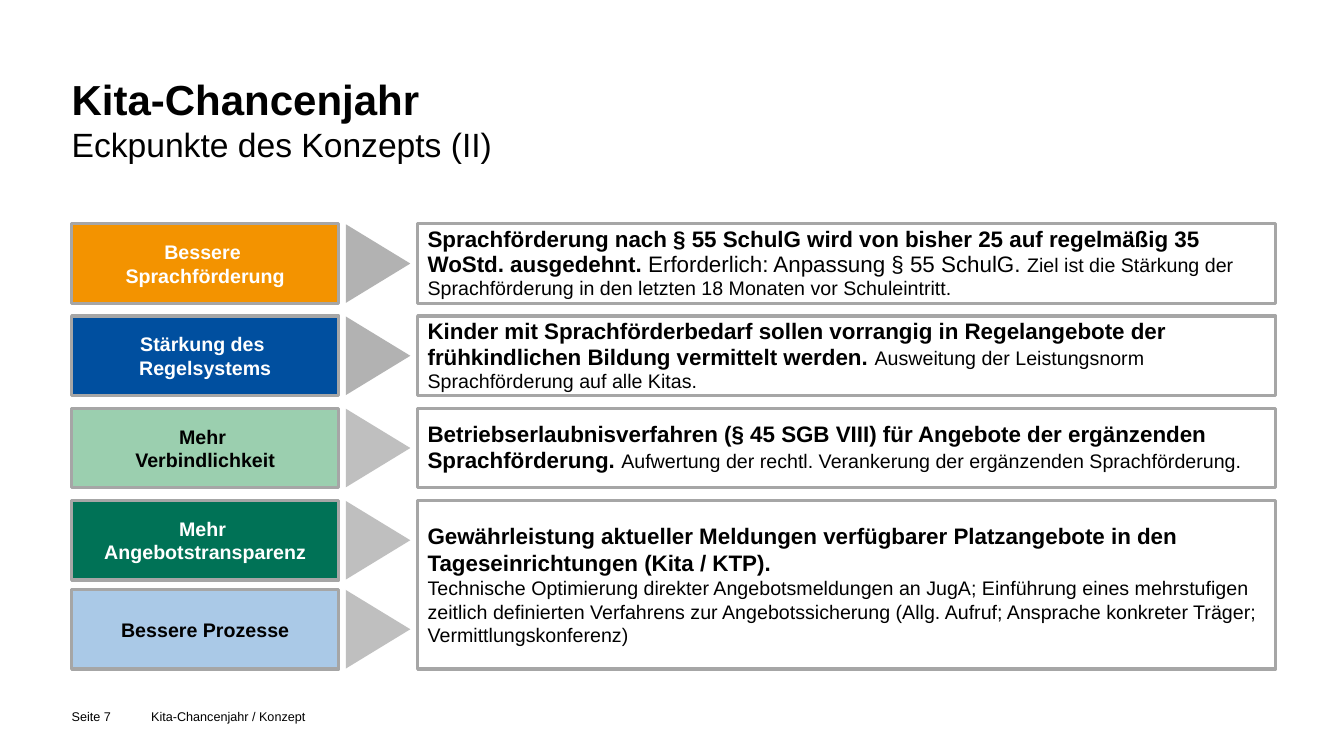
from collections import namedtuple

from pptx import Presentation
from pptx.dml.color import RGBColor
from pptx.enum.shapes import MSO_SHAPE
from pptx.enum.text import MSO_ANCHOR, MSO_AUTO_SIZE, PP_ALIGN
from pptx.util import Inches, Pt

Box = namedtuple("Box", "left top width height")

WIDTH, HEIGHT = Inches(13.33), Inches(7.5)
COLUMN, ROW = WIDTH / 100, HEIGHT / 100
FONT = "Arial"
COLORS = {
    "black": "000000", "white": "FFFFFF", "border": "A6A6A6",
    "arrow": "B2B2B2", "light arrow": "BFBFBF",
    "orange": "F39300", "blue": "004F9F", "mint": "9BCFAF",
    "green": "007256", "sky": "AAC9E7",
}
LEAD = {"size": Pt(16), "bold": True}
LABEL = {"size": Pt(14), "bold": True}
PLAIN = {"size": Pt(16), "bold": False}
DETAIL = {"size": Pt(14), "bold": False}
FOOTER = {"size": Pt(9), "bold": False}

MARGIN = 5.33
LABEL_WIDTH, LABEL_HEIGHT = 19.88, 10.53
ARROW_CENTER, ARROW_DEPTH, ARROW_SPAN = 22.8, 4.8, 10.4
TEXT_OFFSET = 25.75
BAND_TOP, BAND_PITCH = 29.6, 12.2
DOUBLE_HEIGHT = 22.3

BANDS = [
    ([("Bessere \nSprachförderung", "orange", "white")], "arrow", LABEL_HEIGHT,
     [[("Sprachförderung nach § 55 SchulG wird von bisher 25 auf regelmäßig 35 "
        "WoStd. ausgedehnt. ", LEAD),
       ("Erforderlich: Anpassung § 55 SchulG. ", PLAIN),
       ("Ziel ist die Stärkung der Sprachförderung in den letzten 18 Monaten "
        "vor Schuleintritt.", DETAIL)]]),
    ([("Stärkung des \nRegelsystems", "blue", "white")], "arrow", LABEL_HEIGHT,
     [[("Kinder mit Sprachförderbedarf sollen vorrangig in Regelangebote der "
        "frühkindlichen Bildung vermittelt werden. ", LEAD),
       ("Ausweitung der Leistungsnorm Sprachförderung auf alle Kitas.", DETAIL)]]),
    ([("Mehr \nVerbindlichkeit", "mint", "black")], "light arrow", LABEL_HEIGHT,
     [[("Betriebserlaubnisverfahren (§ 45 SGB VIII) für Angebote der ergänzenden "
        "Sprachförderung. ", LEAD),
       ("Aufwertung der rechtl. Verankerung der ergänzenden Sprachförderung.",
        DETAIL)]]),
    ([("Mehr \nAngebotstransparenz", "green", "white"),
      ("Bessere Prozesse", "sky", "black")], "light arrow", DOUBLE_HEIGHT,
     [[("Gewährleistung aktueller Meldungen verfügbarer Platzangebote in den "
        "Tageseinrichtungen (Kita / KTP).", LEAD)],
      [("Technische Optimierung direkter Angebotsmeldungen an JugA; Einführung "
        "eines mehrstufigen zeitlich definierten Verfahrens zur "
        "Angebotssicherung (Allg. Aufruf; Ansprache konkreter Träger; "
        "Vermittlungskonferenz)", DETAIL)]]),
]


def color(name):
    return RGBColor.from_string(COLORS[name])


def place(box):
    return (round(box.left * COLUMN), round(box.top * ROW),
            round(box.width * COLUMN), round(box.height * ROW))


def write(frame, paragraphs, ink="black", align=PP_ALIGN.LEFT,
          anchor=MSO_ANCHOR.TOP, inset=0, spacing=1.0):
    settings = {"word_wrap": True, "auto_size": MSO_AUTO_SIZE.NONE,
                "vertical_anchor": anchor, "margin_left": inset,
                "margin_right": inset, "margin_top": 0, "margin_bottom": 0}
    for name, value in settings.items():
        setattr(frame, name, value)
    for index, spans in enumerate(paragraphs):
        para = frame.add_paragraph() if index else frame.paragraphs[0]
        para.alignment = align
        para.line_spacing = spacing
        para.space_before = Pt(0)
        for words, style in spans:
            for number, line in enumerate(words.split("\n")):
                if number:
                    para.add_line_break()
                if not line:
                    continue
                span = para.add_run()
                span.text = line
                for name, value in {"name": FONT, **style}.items():
                    setattr(span.font, name, value)
                span.font.color.rgb = color(ink)


def add_block(page, kind, box, fill, border=None):
    shape = page.shapes.add_shape(kind, *place(box))
    shape.shadow.inherit = False
    shape.fill.solid()
    shape.fill.fore_color.rgb = color(fill)
    if border:
        shape.line.color.rgb = color(border)
        shape.line.width = Pt(2.25)
    else:
        shape.line.fill.background()
    return shape


def add_title(page, box):
    title = page.shapes.title
    title.left, title.top, title.width, title.height = place(box)
    write(title.text_frame,
          [[("Kita-Chancenjahr\n", {"size": Pt(30), "bold": True}),
            ("Eckpunkte des Konzepts (II)", {"size": Pt(24), "bold": False})]])


def add_footer(page, box):
    number_width, name_offset = 5.25, 5.92
    parts = [("Seite 7", box._replace(width=number_width)),
             ("Kita-Chancenjahr / Konzept",
              box._replace(left=box.left + name_offset,
                           width=box.width - name_offset))]
    for words, part in parts:
        frame = page.shapes.add_textbox(*place(part)).text_frame
        write(frame, [[(words, FOOTER)]])


def add_arrow(page, box, fill):
    width, height = round(ARROW_SPAN * ROW), round(ARROW_DEPTH * COLUMN)
    center = (box.left + ARROW_CENTER) * COLUMN
    middle = (box.top + box.height / 2) * ROW
    arrow = add_block(page, MSO_SHAPE.ISOSCELES_TRIANGLE, box, fill)
    arrow.width, arrow.height = width, height
    arrow.left, arrow.top = round(center - width / 2), round(middle - height / 2)
    arrow.rotation = 90


def add_band(page, box, labels, arrow_fill, paragraphs):
    step = (box.height - LABEL_HEIGHT) / max(len(labels) - 1, 1)
    for index, (words, fill, ink) in enumerate(labels):
        part = Box(box.left, box.top + index * step, LABEL_WIDTH, LABEL_HEIGHT)
        label = add_block(page, MSO_SHAPE.RECTANGLE, part, fill, "border")
        write(label.text_frame, [[(words, LABEL)]], ink,
              PP_ALIGN.CENTER, MSO_ANCHOR.MIDDLE, Inches(0.1))
        add_arrow(page, part, arrow_fill)
    part = box._replace(left=box.left + TEXT_OFFSET,
                        width=box.width - TEXT_OFFSET)
    detail = add_block(page, MSO_SHAPE.RECTANGLE, part, "white", "border")
    write(detail.text_frame, paragraphs, anchor=MSO_ANCHOR.MIDDLE,
          inset=Inches(0.1), spacing=0.95 if len(labels) == 1 else 1.0)


def main():
    deck = Presentation()
    deck.slide_width, deck.slide_height = WIDTH, HEIGHT
    page = deck.slides.add_slide(deck.slide_layouts[5])
    add_title(page, Box(MARGIN, 9.73, 89.35, 15.73))
    for index, (labels, arrow_fill, height, paragraphs) in enumerate(BANDS):
        box = Box(MARGIN, BAND_TOP + index * BAND_PITCH, 89.6, height)
        add_band(page, box, labels, arrow_fill, paragraphs)
    add_footer(page, Box(MARGIN, 93.73, 76.67, 2.8))
    deck.save("out.pptx")


if __name__ == "__main__":
    main()
